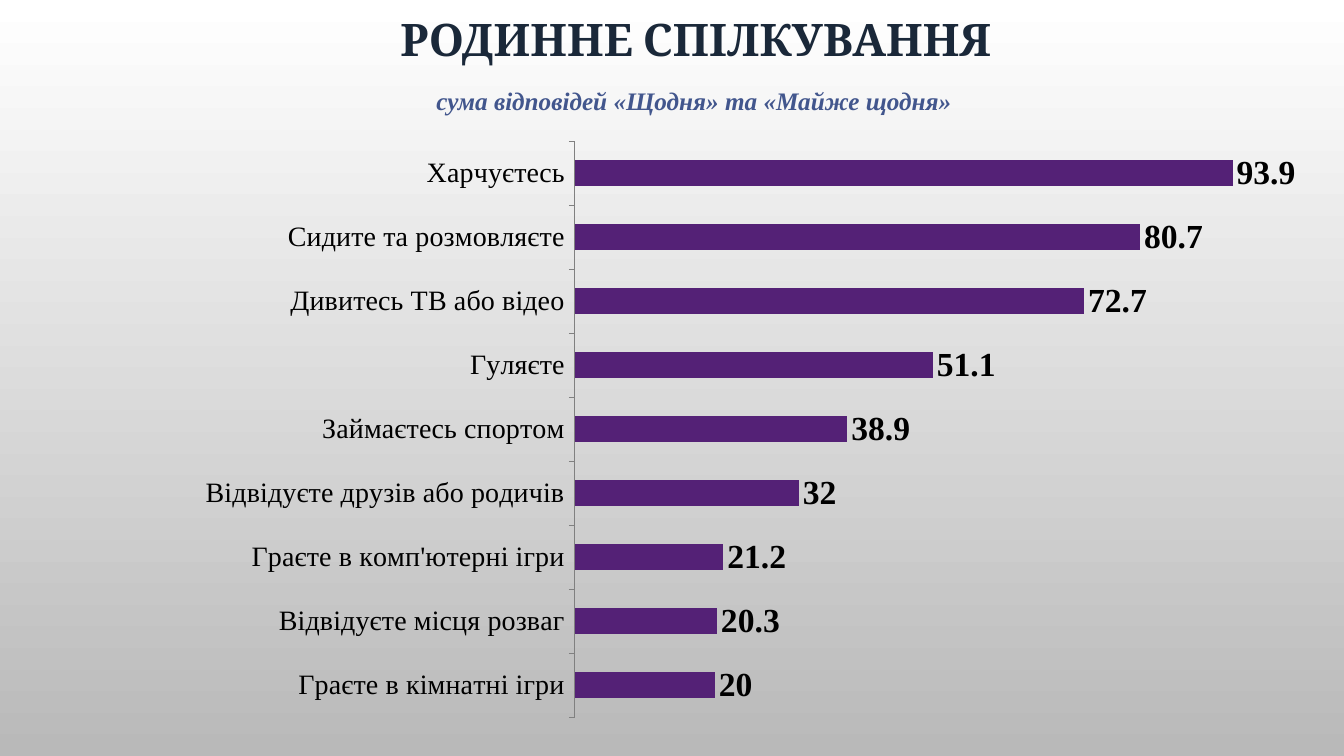
import pptx
import pptx.chart.data
import pptx.dml.color
import pptx.enum.chart
import pptx.enum.text
import pptx.oxml
import pptx.oxml.ns
import pptx.util

Pt = pptx.util.Pt
RGBColor = pptx.dml.color.RGBColor

WHITE = RGBColor(0xFF, 0xFF, 0xFF)
GREY = RGBColor(0xB9, 0xB9, 0xB9)
BLACK = RGBColor(0x00, 0x00, 0x00)
AXIS_GREY = RGBColor(0x80, 0x80, 0x80)
NAVY = RGBColor(0x1A, 0x28, 0x39)
BLUE = RGBColor(0x42, 0x56, 0x8D)
PURPLE = RGBColor(0x54, 0x21, 0x76)

SERIF = "Times New Roman"

# Share of families by shared activity, bottom bar first
ACTIVITIES = {
    "Граєте в кімнатні ігри": 20,
    "Відвідуєте місця розваг": 20.3,
    "Граєте в комп'ютерні ігри": 21.2,
    "Відвідуєте друзів або родичів": 32,
    "Займаєтесь спортом": 38.9,
    "Гуляєте": 51.1,
    "Дивитесь ТВ або відео": 72.7,
    "Сидите та розмовляєте": 80.7,
    "Харчуєтесь": 93.9,
}


def set_font(font, name, size, color, bold=False, italic=False):
    font.name = name
    font.size = Pt(size)
    font.color.rgb = color
    font.bold = bold
    font.italic = italic


def paint_background(slide):
    fill = slide.background.fill
    fill.gradient()
    fill.gradient_angle = 270
    for stop, position, color in zip(fill.gradient_stops, (0, 1), (WHITE, GREY)):
        stop.position = position
        stop.color.rgb = color


def place_title(slide, left, top, width, height):
    title = slide.shapes.title
    title.left, title.top = Pt(left), Pt(top)
    title.width, title.height = Pt(width), Pt(height)
    frame = title.text_frame
    frame.text = "РОДИННЕ СПІЛКУВАННЯ"
    frame.vertical_anchor = pptx.enum.text.MSO_ANCHOR.MIDDLE
    heading = frame.paragraphs[0]
    heading.alignment = pptx.enum.text.PP_ALIGN.CENTER
    set_font(heading.runs[0].font, "Cambria", 32, NAVY, bold=True)


def place_subtitle(slide, left, top, width, height):
    subtitle = slide.shapes.add_textbox(Pt(left), Pt(top), Pt(width), Pt(height))
    frame = subtitle.text_frame
    frame.word_wrap = True
    frame.text = "сума відповідей «Щодня» та «Майже щодня»"
    set_font(frame.paragraphs[0].runs[0].font, SERIF, 18, BLUE, bold=True, italic=True)


def fix_plot_area(chart, x, y, w, h):
    """Pin the inner plot area to fractions of the chart frame."""
    plot_area = chart.plots[0]._element.getparent()
    for old in plot_area.findall(pptx.oxml.ns.qn("c:layout")):
        plot_area.remove(old)
    sizes = "".join(f'<c:{key} val="{value}"/>'
                    for key, value in zip("xywh", (x, y, w, h)))
    plot_area.insert(0, pptx.oxml.parse_xml(
        f'<c:layout {pptx.oxml.ns.nsdecls("c")}><c:manualLayout>'
        '<c:layoutTarget val="inner"/><c:xMode val="edge"/><c:yMode val="edge"/>'
        f'{sizes}</c:manualLayout></c:layout>'))


def place_activity_chart(slide, left, top, width, height):
    shares = pptx.chart.data.CategoryChartData()
    shares.categories = list(ACTIVITIES)
    shares.add_series("Series 1", list(ACTIVITIES.values()))
    chart = slide.shapes.add_chart(
        pptx.enum.chart.XL_CHART_TYPE.BAR_CLUSTERED,
        Pt(left), Pt(top), Pt(width), Pt(height), shares).chart
    chart.has_legend = False
    chart.has_title = False
    set_font(chart.font, "Calibri", 18, BLACK)
    fix_plot_area(chart, 0.429, 0.015, 0.535, 0.943)

    # Axes
    activity_axis = chart.category_axis
    activity_axis.has_major_gridlines = False
    activity_axis.major_tick_mark = pptx.enum.chart.XL_TICK_MARK.OUTSIDE
    activity_axis.format.line.color.rgb = AXIS_GREY
    set_font(activity_axis.tick_labels.font, SERIF, 20, BLACK)
    share_axis = chart.value_axis
    share_axis.minimum_scale, share_axis.maximum_scale = 0, 100
    share_axis.has_major_gridlines = False
    share_axis.visible = False

    # Bars and their values
    bars = chart.plots[0]
    bars.gap_width = 150
    bars.vary_by_categories = False
    fill = bars.series[0].format.fill
    fill.solid()
    fill.fore_color.rgb = PURPLE
    labels = bars.series[0].data_labels
    labels.show_value = True
    labels.position = pptx.enum.chart.XL_LABEL_POSITION.OUTSIDE_END
    set_font(labels.font, SERIF, 24, BLACK, bold=True)


def build_family_slide(deck):
    slide = deck.slides.add_slide(deck.slide_layouts[5])
    paint_background(slide)
    place_title(slide, 105.8, 0.7, 782.6, 54)
    place_activity_chart(slide, 9.4, 94.3, 935.3, 436.3)
    place_subtitle(slide, 304.6, 57.6, 383.8, 28.8)


def main():
    deck = pptx.Presentation()
    deck.slide_width, deck.slide_height = Pt(960), Pt(540)
    build_family_slide(deck)
    deck.save("out.pptx")


if __name__ == "__main__":
    main()
